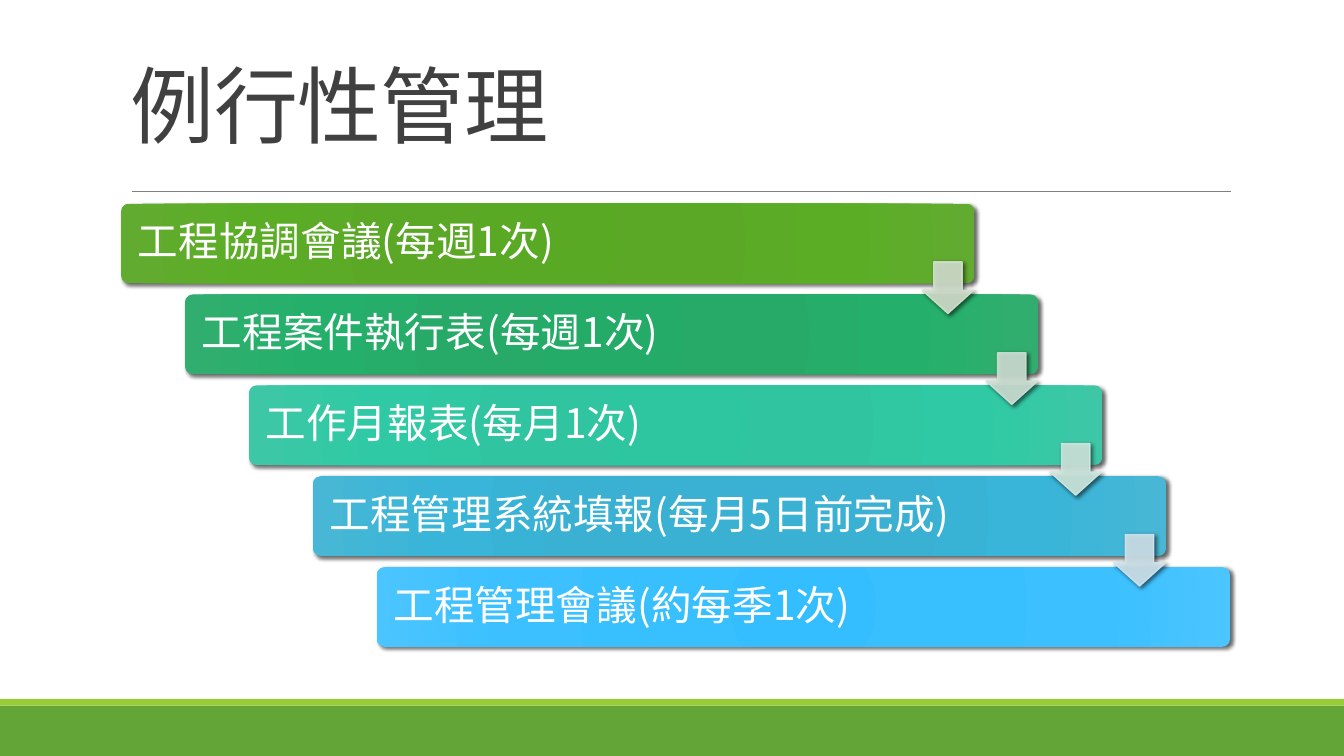
from lxml.etree import SubElement
from pptx import Presentation
from pptx.dml.color import RGBColor
from pptx.enum.shapes import MSO_CONNECTOR, MSO_SHAPE
from pptx.enum.text import MSO_ANCHOR, PP_ALIGN
from pptx.oxml.ns import qn
from pptx.util import Cm, Pt

FONT = "Noto Sans CJK SC"
COLORS = {
    "footer": "63A537",
    "strip": "99CB38",
    "rule": "808080",
    "title": "404040",
    "text": "FFFFFF",
    "shadow": "000000",
}
STEPS = [
    ("工程協調會議(每週1次)", ["59A924", "5BA827", "5BAD25", "62AB31"], "D3E1CE"),
    ("工程案件執行表(每週1次)", ["24AB67", "27AA68", "24B06A", "31AD6F"], "CEE1D5"),
    ("工作月報表(每月1次)", ["2EC5A1", "31C4A1", "2FCAA5", "3EC7A6"], "CFE9E0"),
    ("工程管理系統填報(每月5日前完成)", ["37B1D3", "3AB1D2", "38B5D8", "48B7D5"], "D0E5ED"),
    ("工程管理會議(約每季1次)", ["34BEFF", "38BFFE", "3CC0FF", "4BC5FF"], None),
]
STOPS = [0, 34, 70, 100]
STEP_X, STEP_Y = 1.61, 2.29


def write(frame, text, size, color, line_spacing):
    frame.word_wrap = True
    frame.vertical_anchor = MSO_ANCHOR.MIDDLE
    para = frame.paragraphs[0]
    para.text = text
    para.alignment = PP_ALIGN.LEFT
    para.line_spacing = line_spacing
    para.font.size = Pt(size)
    para.font.name = FONT
    para.font.color.rgb = RGBColor.from_string(color)
    properties = para.font._element
    SubElement(properties, qn("a:ea"), typeface=FONT)
    return properties


def add_shadow(shape):
    shape.shadow.inherit = False
    effects = shape._element.spPr.find(qn("a:effectLst"))
    shadow = SubElement(effects, qn("a:outerShdw"), blurRad=str(Pt(3)),
                        dist=str(Pt(2)), dir="2700000", rotWithShape="0")
    color = SubElement(shadow, qn("a:srgbClr"), val=COLORS["shadow"])
    SubElement(color, qn("a:alpha"), val="60000")


deck = Presentation()
deck.slide_width, deck.slide_height = Cm(33.87), Cm(19.05)
page = deck.slides.add_slide(deck.slide_layouts[6])

for name, top, height in [("footer", 17.78, 1.27), ("strip", 17.61, 0.17)]:
    band = page.shapes.add_shape(MSO_SHAPE.RECTANGLE, 0, Cm(top), deck.slide_width, Cm(height))
    band.shadow.inherit = False
    band.fill.solid()
    band.fill.fore_color.rgb = RGBColor.from_string(COLORS[name])
    band.line.fill.background()

rule = page.shapes.add_connector(MSO_CONNECTOR.STRAIGHT, Cm(3.33), Cm(4.83), Cm(31.01), Cm(4.83))
rule.line.color.rgb = RGBColor.from_string(COLORS["rule"])
rule.line.width = Pt(0.5)
SubElement(rule._element.spPr, qn("a:effectLst"))

title = page.shapes.add_textbox(Cm(3.05), Cm(0.79), Cm(27.94), Cm(4.04))
title_font = write(title.text_frame, "例行性管理", 60, COLORS["title"], 0.85)
title_font.set("spc", "-50")

for index, (label, shades, _) in enumerate(STEPS):
    bar = page.shapes.add_shape(MSO_SHAPE.ROUNDED_RECTANGLE, Cm(3.05 + index * STEP_X),
                                Cm(5.13 + index * STEP_Y), Cm(21.51), Cm(2.01))
    bar.adjustments[0] = 0.1
    bar.fill.gradient()
    gradient = bar._element.spPr.find(qn("a:gradFill"))
    gradient.clear()
    stop_list = SubElement(gradient, qn("a:gsLst"))
    for stop, shade in zip(STOPS, shades):
        mark = SubElement(stop_list, qn("a:gs"), pos=str(stop * 1000))
        SubElement(mark, qn("a:srgbClr"), val=shade)
    circle = SubElement(gradient, qn("a:path"), path="circle")
    SubElement(circle, qn("a:fillToRect"), l="100000", t="100000", r="100000", b="100000")
    bar.line.fill.background()
    add_shadow(bar)
    frame = bar.text_frame
    frame.margin_left = frame.margin_right = Cm(0.37)
    frame.margin_top = frame.margin_bottom = Cm(0.3)
    write(frame, label, 29, COLORS["text"], 0.9)

for index, (_, _, tint) in enumerate(STEPS[:-1]):
    arrow = page.shapes.add_shape(MSO_SHAPE.DOWN_ARROW, Cm(23.24 + index * STEP_X),
                                  Cm(6.6 + index * STEP_Y), Cm(1.3), Cm(1.3))
    arrow.adjustments[0] = 0.55
    arrow.adjustments[1] = 0.45
    arrow.fill.solid()
    arrow.fill.fore_color.rgb = RGBColor.from_string(tint)
    arrow.line.color.rgb = RGBColor.from_string(tint)
    arrow.line.width = Pt(1)
    for color in arrow._element.spPr.iter(qn("a:srgbClr")):
        SubElement(color, qn("a:alpha"), val="90000")
    add_shadow(arrow)

deck.save("out.pptx")
